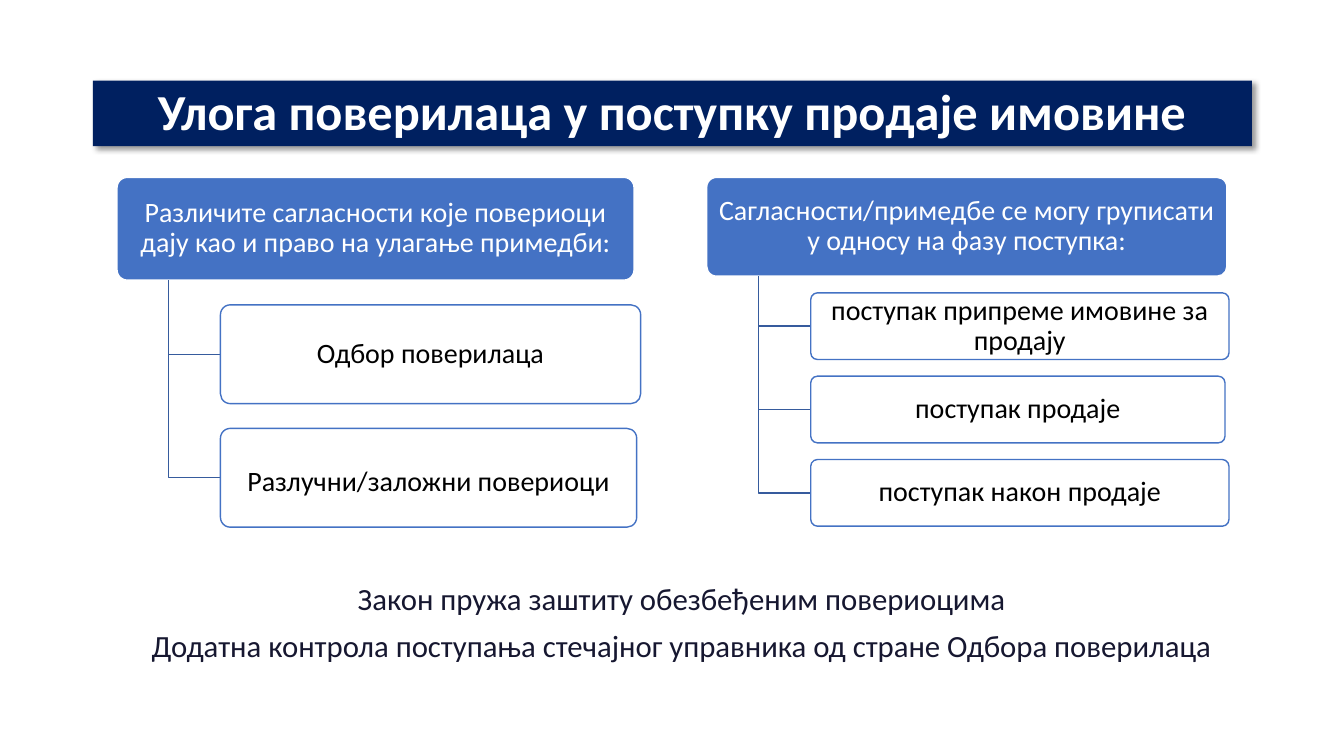
from lxml import etree
from pptx import Presentation
from pptx.dml.color import RGBColor
from pptx.enum.shapes import MSO_SHAPE
from pptx.enum.text import MSO_ANCHOR, MSO_AUTO_SIZE, PP_ALIGN
from pptx.oxml import parse_xml
from pptx.oxml.ns import nsdecls, qn
from pptx.util import Cm, Pt

ROUND = MSO_SHAPE.ROUNDED_RECTANGLE
MIDDLE, BOTTOM, TOP = MSO_ANCHOR.MIDDLE, MSO_ANCHOR.BOTTOM, MSO_ANCHOR.TOP
CENTER = PP_ALIGN.CENTER
FIXED = MSO_AUTO_SIZE.NONE

COLORS = {
    "navy": "002060",
    "blue": "4472C4",
    "branch": "365B9D",
    "note": "161730",
    "white": "FFFFFF",
    "black": "000000",
}


def color(name):
    return RGBColor.from_string(COLORS[name])


def place(shape, box):
    shape.left, shape.top, shape.width, shape.height = [Cm(n) for n in box]


def style(frame, size, tone, anchor=MIDDLE, bold=False):
    frame.word_wrap = True
    frame.auto_size = FIXED
    frame.vertical_anchor = anchor
    for para in frame.paragraphs:
        para.alignment = CENTER
        para.line_spacing = 0.9
        para.space_before = Pt(0)
        for run in para.runs:
            run.font.name = "Calibri"
            run.font.size = Pt(size)
            run.font.bold = bold
            run.font.color.rgb = color(tone)


def add_title(slide, box, text):
    title = slide.shapes.title
    place(title, box)
    title.fill.solid()
    title.fill.fore_color.rgb = color("navy")
    title._element.spPr.append(parse_xml(
        f'<a:effectLst {nsdecls("a")}>'
        '<a:outerShdw blurRad="50800" dist="38100" dir="2700000" algn="tl" rotWithShape="0">'
        f'<a:srgbClr val="{COLORS["black"]}"><a:alpha val="40000"/></a:srgbClr>'
        '</a:outerShdw></a:effectLst>'))
    title.text_frame.text = text
    style(title.text_frame, 36, "white", BOTTOM, True)


def add_card(slide, box, text, fill, line, tone, drop=0):
    """Draw a rounded box; drop is extra space above its text."""
    card = slide.shapes.add_shape(ROUND, *[Cm(n) for n in box])
    card.shadow.inherit = False
    card.adjustments[0] = 0.1
    card.fill.solid()
    card.fill.fore_color.rgb = color(fill)
    card.line.color.rgb = color(line)
    card.line.width = Pt(1)
    frame = card.text_frame
    frame.margin_left = frame.margin_right = Cm(0.17)
    frame.margin_top = Cm(0.15 + drop)
    frame.margin_bottom = Cm(0.15)
    frame.text = text
    style(frame, 20, tone)


def add_branch(slide, x, top, end, y):
    pen = slide.shapes.build_freeform(Cm(x), Cm(top))
    pen.add_line_segments([(Cm(x), Cm(y)), (Cm(end), Cm(y))], close=False)
    branch = pen.convert_to_shape()
    branch.shadow.inherit = False
    branch.fill.background()
    branch.line.color.rgb = color("branch")
    branch.line.width = Pt(1)


def add_tree(slide, box, head, items, high):
    """Draw a head box and its items; each item is (text, width, drop)."""
    left, top, width, height = box
    add_card(slide, box, head, "blue", "white", "white")
    base = top + height
    trunk, inner = left + width / 10, left + width / 5
    gap = high / 4
    for i, (text, wide, drop) in enumerate(items):
        y = base + gap + i * (high + gap)
        add_branch(slide, trunk, base, inner, y + high / 2)
        add_card(slide, (inner, y, wide, high), text, "white", "blue", "black", drop)


def add_notes(slide, box, lines):
    """Fill the body placeholder with centred lines without bullets."""
    body = slide.placeholders[1]
    place(body, box)
    frame = body.text_frame
    frame.text = "\n".join(lines)
    for para in frame.paragraphs:
        props = para._p.get_or_add_pPr()
        props.set("marL", "0")
        props.set("indent", "0")
        etree.SubElement(props, qn("a:buNone"))
    style(frame, 22, "note", TOP)
    for para in frame.paragraphs[1:]:
        para.space_before = Pt(10)


def main():
    deck = Presentation()
    deck.slide_width, deck.slide_height = Cm(33.87), Cm(19.05)
    slide = deck.slides.add_slide(deck.slide_layouts[1])
    add_title(slide, (2.34, 2.03, 29.21, 1.65),
              "Улога поверилаца у поступку продаје имовине")
    add_tree(slide, (2.95, 4.47, 13.03, 2.59),
             "Различите сагласности које повериоци дају као и право на улагање примедби:",
             [("Одбор поверилаца", 10.59, 0),
              ("Разлучни/заложни повериоци", 10.49, 0.25)], 2.49)
    add_tree(slide, (17.81, 4.47, 13.11, 2.49),
             "Сагласности/примедбе се могу груписати у односу на фазу поступка:",
             [("поступак припреме имовине за продају", 10.54, 0),
              ("поступак продаје", 10.44, 0),
              ("поступак након продаје", 10.54, 0)], 1.68)
    add_notes(slide, (2.57, 14.58, 29.21, 2.84),
              ["Закон пружа заштиту обезбеђеним повериоцима",
               "Додатна контрола поступања стечајног управника од стране Одбора поверилаца"])
    deck.save("out.pptx")


if __name__ == "__main__":
    main()
